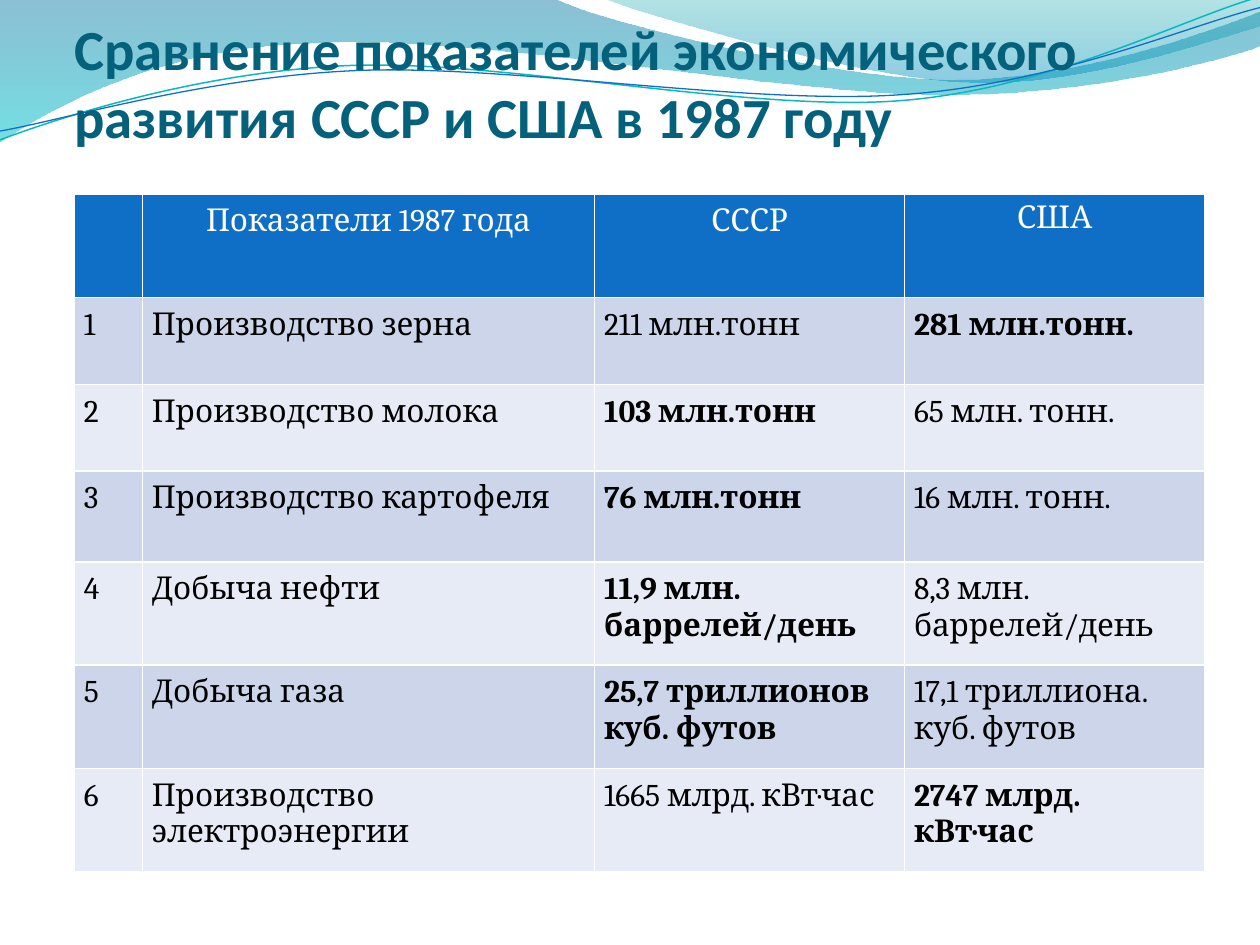
"""Build a slide comparing the economic indicators of the USSR and the USA in 1987."""
import math

import pptx
import pptx.dml.color
import pptx.enum.text
import pptx.oxml
import pptx.oxml.ns
import pptx.util
from lxml import etree

RGBColor = pptx.dml.color.RGBColor
Inches = pptx.util.Inches
Pt = pptx.util.Pt
qn = pptx.oxml.ns.qn

TITLE = "Сравнение показателей экономического развития СССР и США в 1987 году"
HEADER = ("", "Показатели 1987 года", "СССР", "США")
INDICATORS = [
    ("Производство зерна", "211 млн.тонн", "281 млн.тонн."),
    ("Производство молока", "103 млн.тонн", "65 млн. тонн."),
    ("Производство картофеля", "76 млн.тонн", "16 млн. тонн."),
    ("Добыча нефти", "11,9 млн. баррелей/день", "8,3 млн. баррелей/день"),
    ("Добыча газа", "25,7 триллионов куб. футов", "17,1 триллиона. куб. футов"),
    ("Производство электроэнергии", "1665 млрд. кВт·час", "2747 млрд. кВт·час"),
]
LEADER_COLUMNS = (3, 2, 2, 2, 2, 3)
COLUMN_WIDTHS = (0.54, 3.59, 2.46, 2.38)
ROW_HEIGHTS = (0.82, 0.69, 0.69, 0.72, 0.82, 0.82, 0.82)
LEFT, TABLE_TOP = 0.59, 1.54
CELL_INSET, SMALL_INSET = Pt(5.4), Pt(3.6)

WHITE = RGBColor(0xFF, 0xFF, 0xFF)
BLACK = RGBColor(0, 0, 0)
TITLE_COLOR = RGBColor(0x04, 0x61, 0x7B)
HEADER_FILL = RGBColor(0x0F, 0x6F, 0xC6)
BAND_FILLS = (RGBColor(0xE7, 0xEB, 0xF5), RGBColor(0xCC, 0xD5, 0xEA))
DEEP_BLUE = RGBColor(0x00, 0x74, 0xA1)
CYAN = RGBColor(0x00, 0xC6, 0xCF)
TEAL = RGBColor(0x00, 0xA1, 0xA9)
OCEAN = RGBColor(0x00, 0x8B, 0xBF)
LINE_TEAL = RGBColor(0x0A, 0xB8, 0xBF)

WAVES = [
    ([(0, 0), (4.4, -0.01), (4.76, 0.17, 6.64, 0.63, 7.58, 0.63),
      (8.53, 0.63, 9.58, 0.26, 10, 0.09), (10.01, 0.36),
      (9.83, 0.44, 8.7, 0.76, 7.46, 0.75), (6.22, 0.75, 3.82, 0.28, 2.57, 0.34),
      (1.29, 0.36, 0.46, 0.83, -0.01, 1.13)], ((DEEP_BLUE, 45), (CYAN, 55))),
    ([(4.79, -0.01), (5.09, 0.11, 6.82, 0.62, 7.69, 0.65),
      (8.56, 0.69, 9.61, 0.32, 10, 0.21), (10, 0)], ((TEAL, 30), (OCEAN, 45))),
]
STROKES = [
    ([(0, 1.11), (0.48, 0.93, 1.58, 0.57, 2.77, 0.52),
      (3.95, 0.47, 5.93, 0.89, 7.13, 0.8), (8.33, 0.71, 9.38, 0.15, 9.98, -0.02)],
     LINE_TEAL, 0.85),
    ([(0, 1.04), (0.47, 0.96, 1.64, 0.61, 2.83, 0.56),
      (4.03, 0.51, 5.97, 0.84, 7.17, 0.75), (8.36, 0.67, 9.41, 0.21, 10, 0.06)],
     HEADER_FILL, 0.75),
]
STROKE_TILT = 2.7
STROKE_CENTER = (4.99, 0.58)


def add_outline(slide, segments, close):
    """Draw an outline of line ends (2 numbers) and Bezier curves (6 numbers)."""
    points = [(Inches(x), Inches(y)) for segment in segments
              for x, y in zip(segment[::2], segment[1::2])]
    builder = slide.shapes.build_freeform(*points[0])
    builder.add_line_segments(points[1:], close=close)
    shape = builder.convert_to_shape()
    shape.shadow.inherit = False
    lines = iter(list(shape.element.iter(qn("a:lnTo"))))
    for segment in segments[1:]:
        line = next(lines)
        if len(segment) == 6:
            line.tag = qn("a:cubicBezTo")
            for control in (next(lines), next(lines)):
                line.append(control[0])
                control.getparent().remove(control)
    return shape


def add_wave(slide, segments, stops):
    """Draw a translucent gradient wave."""
    shape = add_outline(slide, segments, True)
    shape.line.fill.background()
    shape.fill.gradient()
    shape.fill.gradient_angle = 270
    for position, (stop, (color, opacity)) in enumerate(zip(shape.fill.gradient_stops, stops)):
        stop.position = position
        stop.color.rgb = color
    colors = shape.element.spPr.iter(qn("a:srgbClr"))
    for element, (color, opacity) in zip(colors, stops):
        etree.SubElement(element, qn("a:alpha"), val=str(opacity * 1000))


def level(segment):
    """Turn the points of a segment back by the tilt of the strokes."""
    sine, cosine = math.sin(math.radians(STROKE_TILT)), math.cos(math.radians(STROKE_TILT))
    center_x, center_y = STROKE_CENTER
    turned = []
    for x, y in zip(segment[::2], segment[1::2]):
        across, down = x - center_x, y - center_y
        turned += [center_x + across * cosine - down * sine,
                   center_y + across * sine + down * cosine]
    return turned


def add_stroke(slide, segments, color, width):
    """Draw a thin tilted curve."""
    shape = add_outline(slide, [level(segment) for segment in segments], False)
    shape.rotation = 360 - STROKE_TILT
    shape.fill.background()
    shape.line.color.rgb = color
    shape.line.width = Pt(width)


def style_text(text_frame, font_name, size, color, bold, alignment):
    """Format every run of a text frame."""
    for paragraph in text_frame.paragraphs:
        paragraph.alignment = alignment
        for run in paragraph.runs:
            run.font.name = font_name
            run.font.size = Pt(size)
            run.font.bold = bold
            run.font.color.rgb = color


def set_borders(cell):
    """Give a cell thin white borders."""
    properties = cell._tc.get_or_add_tcPr()
    for index, side in enumerate("LRTB"):
        properties.insert(index, pptx.oxml.parse_xml(
            f'<a:ln{side} {pptx.oxml.ns.nsdecls("a")} w="{Pt(1)}"><a:solidFill>'
            f'<a:srgbClr val="{WHITE}"/></a:solidFill></a:ln{side}>'))


def add_title(slide):
    """Place and format the title in front of the waves."""
    title = slide.shapes.title
    slide.shapes._spTree.append(title.element)
    title.left, title.top = Inches(LEFT), Inches(0.68)
    title.width, title.height = Inches(9), Inches(1.25)
    frame = title.text_frame
    frame.text = TITLE
    frame.word_wrap = True
    frame.auto_size = pptx.enum.text.MSO_AUTO_SIZE.NONE
    frame.vertical_anchor = pptx.enum.text.MSO_ANCHOR.BOTTOM
    frame.margin_left = frame.margin_right = 0
    frame.margin_top, frame.margin_bottom = Inches(0.05), Inches(0.74)
    style_text(frame, "Calibri", 32.4, TITLE_COLOR, True, pptx.enum.text.PP_ALIGN.LEFT)


def add_indicator_table(slide):
    """Add the table of indicators, with the leader of each row in bold."""
    align = pptx.enum.text.PP_ALIGN
    rows = [HEADER] + [(str(n), *row) for n, row in enumerate(INDICATORS, 1)]
    table = slide.shapes.add_table(
        len(rows), len(HEADER), Inches(LEFT), Inches(TABLE_TOP),
        Inches(sum(COLUMN_WIDTHS)), Inches(sum(ROW_HEIGHTS))).table
    for column, width in zip(table.columns, COLUMN_WIDTHS):
        column.width = Inches(width)
    for r, (row, height) in enumerate(zip(rows, ROW_HEIGHTS)):
        table.rows[r].height = Inches(height)
        is_header = r == 0
        for c, text in enumerate(row):
            cell = table.cell(r, c)
            cell.text = text
            cell.margin_left = cell.margin_right = CELL_INSET
            cell.margin_top = cell.margin_bottom = (
                SMALL_INSET if is_header and c == 3 else CELL_INSET)
            cell.fill.solid()
            cell.fill.fore_color.rgb = HEADER_FILL if is_header else BAND_FILLS[r % 2]
            set_borders(cell)
            style_text(cell.text_frame, "Cambria", 18, WHITE if is_header else BLACK,
                       not is_header and c == LEADER_COLUMNS[r - 1],
                       align.CENTER if is_header else align.LEFT)


def main():
    """Build and save the presentation."""
    presentation = pptx.Presentation()
    presentation.slide_width, presentation.slide_height = Inches(10), Inches(7.5)
    slide = presentation.slides.add_slide(presentation.slide_layouts[5])
    for wave in WAVES:
        add_wave(slide, *wave)
    for stroke in STROKES:
        add_stroke(slide, *stroke)
    add_title(slide)
    add_indicator_table(slide)
    presentation.save("out.pptx")


if __name__ == "__main__":
    main()
